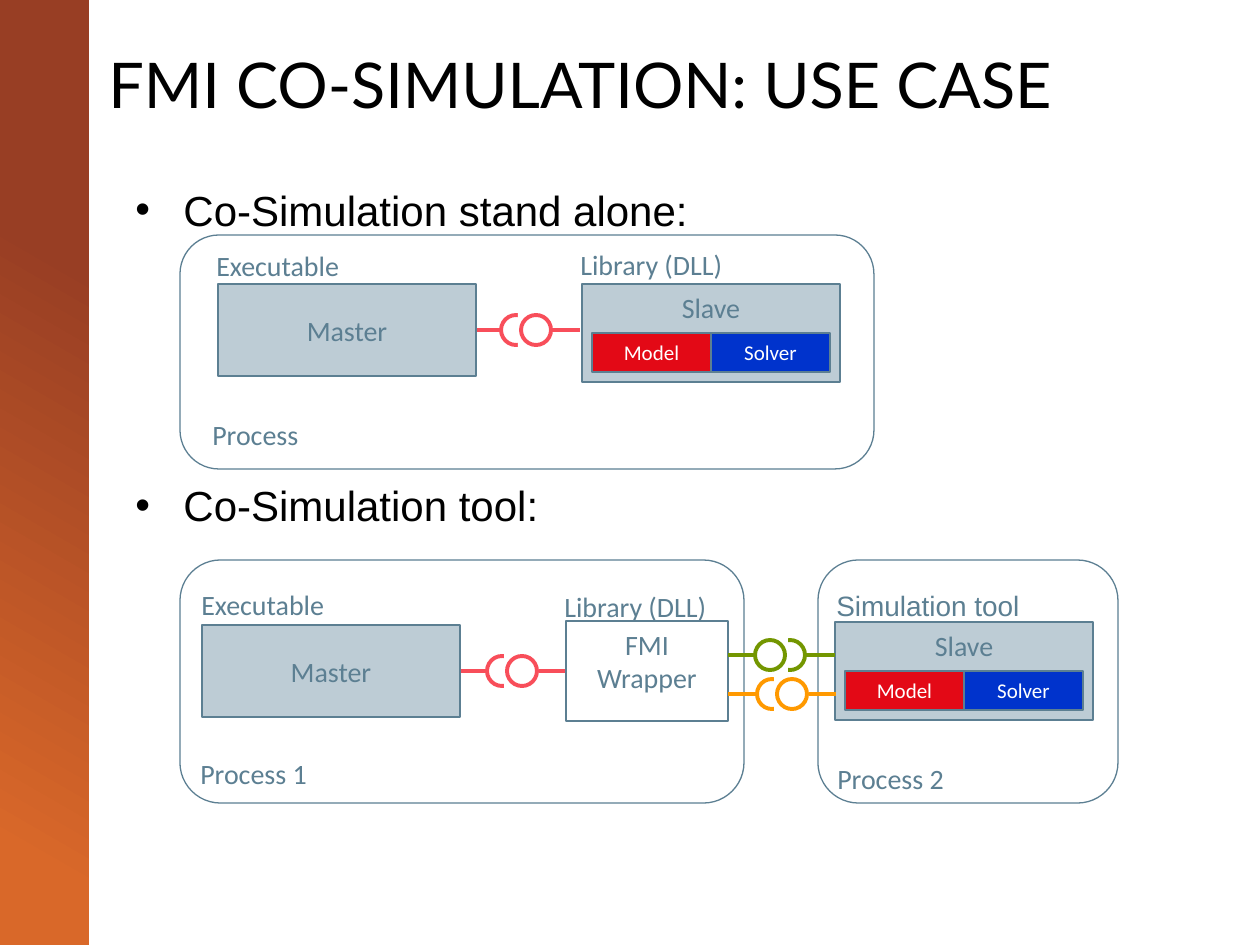
from lxml import etree
from pptx import Presentation
from pptx.dml.color import RGBColor
from pptx.enum.shapes import MSO_CONNECTOR, MSO_SHAPE
from pptx.enum.text import MSO_ANCHOR, MSO_AUTO_SIZE, PP_ALIGN
from pptx.oxml.ns import qn
from pptx.util import Emu, Pt

EMU_PER_PX = 914400 / 126

BLACK = RGBColor(0x00, 0x00, 0x00)
WHITE = RGBColor(0xFF, 0xFF, 0xFF)
SLATE = RGBColor(0x5C, 0x7F, 0x92)
PALE = RGBColor(0xBD, 0xCC, 0xD5)
RED = RGBColor(0xE3, 0x09, 0x16)
BLUE = RGBColor(0x00, 0x33, 0xCC)
CORAL = RGBColor(0xF8, 0x4E, 0x5A)
GREEN = RGBColor(0x73, 0x96, 0x00)
ORANGE = RGBColor(0xFF, 0x99, 0x00)
RUST = RGBColor(0x98, 0x3E, 0x24)
COPPER = RGBColor(0xD9, 0x68, 0x29)


def px(length):
    return Emu(round(length * EMU_PER_PX))


class Diagram:
    """Style and current slide, with one method for each kind of element."""

    font = "Calibri"
    thin = Pt(0.75)
    thick = Pt(2.25)
    circle = 30

    def __init__(self, slide):
        self.shapes = slide.shapes

    def style(self, paragraph, size, color, font=None):
        for run in paragraph.runs:
            run.font.size = Pt(size)
            run.font.name = font or self.font
            run.font.color.rgb = color

    def shape(self, kind, x, y, width, height, fill=None, line=None, weight=thin):
        shape = self.shapes.add_shape(kind, px(x), px(y), px(width), px(height))
        shape.shadow.inherit = False
        if fill is None:
            shape.fill.background()
        else:
            shape.fill.solid()
            shape.fill.fore_color.rgb = fill
        if line is None:
            shape.line.fill.background()
        else:
            shape.line.color.rgb = line
            shape.line.width = weight
        return shape

    def side_band(self, width, height):
        band = self.shape(MSO_SHAPE.RECTANGLE, 0, 0, width, height)
        band.fill.gradient()
        band.fill.gradient_angle = 240
        stops = ((0.27, RUST), (0.9, COPPER))
        for stop, (position, color) in zip(band.fill.gradient_stops, stops):
            stop.position = position
            stop.color.rgb = color

    def process(self, x, y, width, height):
        self.shape(MSO_SHAPE.ROUNDED_RECTANGLE, x, y, width, height, WHITE, SLATE)

    def box(self, text, x, y, width, height, fill=PALE, color=SLATE, size=16,
            anchor=MSO_ANCHOR.TOP):
        shape = self.shape(MSO_SHAPE.RECTANGLE, x, y, width, height, fill, SLATE)
        frame = shape.text_frame
        frame.text = text
        frame.vertical_anchor = anchor
        frame.paragraphs[0].alignment = PP_ALIGN.CENTER
        self.style(frame.paragraphs[0], size, color)
        return shape

    def master(self, x, y):
        return self.box("Master", x, y, 258, 92, anchor=MSO_ANCHOR.MIDDLE)

    def slave(self, x, y):
        """Slave box holding its model and solver."""
        self.box("Slave", x, y, 258, 98)
        for column, (text, fill) in enumerate((("Model", RED), ("Solver", BLUE))):
            self.box(text, x + 10 + 119 * column, y + 49, 119, 39, fill, WHITE, 12)

    def label(self, text, x, y, width, font=None):
        box = self.shapes.add_textbox(px(x), px(y), px(width), px(47))
        frame = box.text_frame
        frame.text = text
        frame.word_wrap = False
        frame.auto_size = MSO_AUTO_SIZE.SHAPE_TO_FIT_TEXT
        self.style(frame.paragraphs[0], 16, SLATE, font)

    def title(self, text, x, y, width, height):
        frame = self.shapes.add_textbox(px(x), px(y), px(width), px(height)).text_frame
        frame.text = text
        frame.word_wrap = True
        frame.vertical_anchor = MSO_ANCHOR.MIDDLE
        self.style(frame.paragraphs[0], 36, BLACK, "Lato")

    def bullets(self, texts, x, y, width, height, gap):
        frame = self.shapes.add_textbox(px(x), px(y), px(width), px(height)).text_frame
        frame.text = "\n".join(texts)
        frame.word_wrap = True
        for index, paragraph in enumerate(frame.paragraphs):
            properties = paragraph._p.get_or_add_pPr()
            properties.set("marL", str(px(48)))
            properties.set("indent", str(px(-48)))
            etree.SubElement(properties, qn("a:buFont"), typeface="Arial")
            etree.SubElement(properties, qn("a:buChar"), char="•")
            if index:
                paragraph.space_before = Pt(gap)
            self.style(paragraph, 24, BLACK, "Arial")

    def line(self, start, end, y, color):
        connector = self.shapes.add_connector(
            MSO_CONNECTOR.STRAIGHT, px(start), px(y), px(end), px(y))
        connector.line.color.rgb = color
        connector.line.width = self.thick
        etree.SubElement(connector._element.spPr, qn("a:effectLst"))
        return connector

    def interface(self, start, x, end, y, color, open_left=True):
        """Socket and ball at x, wired to start and end; return both wires."""
        top = y - self.circle // 2
        centers = (x, x + 20) if open_left else (x + 20, x)
        socket, ball = centers
        self.shape(MSO_SHAPE.OVAL, socket, top, self.circle, self.circle,
                   None, color, self.thick)
        self.shape(MSO_SHAPE.RECTANGLE, x + 17, top - 5, 16, 39, WHITE)
        self.shape(MSO_SHAPE.OVAL, ball, top, self.circle, self.circle,
                   None, color, self.thick)
        return self.line(start, x - 1, y, color), self.line(x + 52, end, y, color)


def main():
    presentation = Presentation()
    presentation.slide_width, presentation.slide_height = px(1260), px(945)
    slide = presentation.slides.add_slide(presentation.slide_layouts[6])
    diagram = Diagram(slide)

    diagram.side_band(89, 945)
    diagram.title("FMI CO-SIMULATION: USE CASE", 96, 38, 1134, 91)
    diagram.bullets(("Co-Simulation stand alone:", "Co-Simulation tool:"),
                    123, 178, 1115, 640, gap=140)

    # Stand alone: one process
    diagram.process(180, 235, 694, 234)
    diagram.label("Process", 200, 411, 127)
    diagram.label("Executable", 204, 242, 165)
    diagram.label("Library (DLL)", 568, 241, 189)
    wire, _ = diagram.interface(476, 501, 580, 330, CORAL)
    diagram.slave(582, 284)
    wire.begin_connect(diagram.master(218, 284), 3)

    # Tool: two processes
    diagram.process(180, 560, 564, 243)
    diagram.label("Process 1", 188, 750, 150)
    diagram.label("Executable", 189, 581, 165)
    diagram.label("Library (DLL)", 552, 583, 190)
    master_wire, wrapper_wire = diagram.interface(460, 487, 566, 671, CORAL)
    diagram.process(818, 560, 300, 243)
    diagram.label("Process 2", 825, 755, 151)
    diagram.label("Simulation tool", 824, 582, 210, "Arial")
    diagram.slave(835, 622)
    wrapper = diagram.box("FMI Wrapper", 566, 621, 162, 100, WHITE)
    wrapper_wire.end_connect(wrapper, 1)
    diagram.interface(728, 755, 835, 655, GREEN, open_left=False)
    diagram.interface(728, 757, 836, 694, ORANGE)
    master_wire.begin_connect(diagram.master(202, 625), 3)

    presentation.save("out.pptx")


if __name__ == "__main__":
    main()
